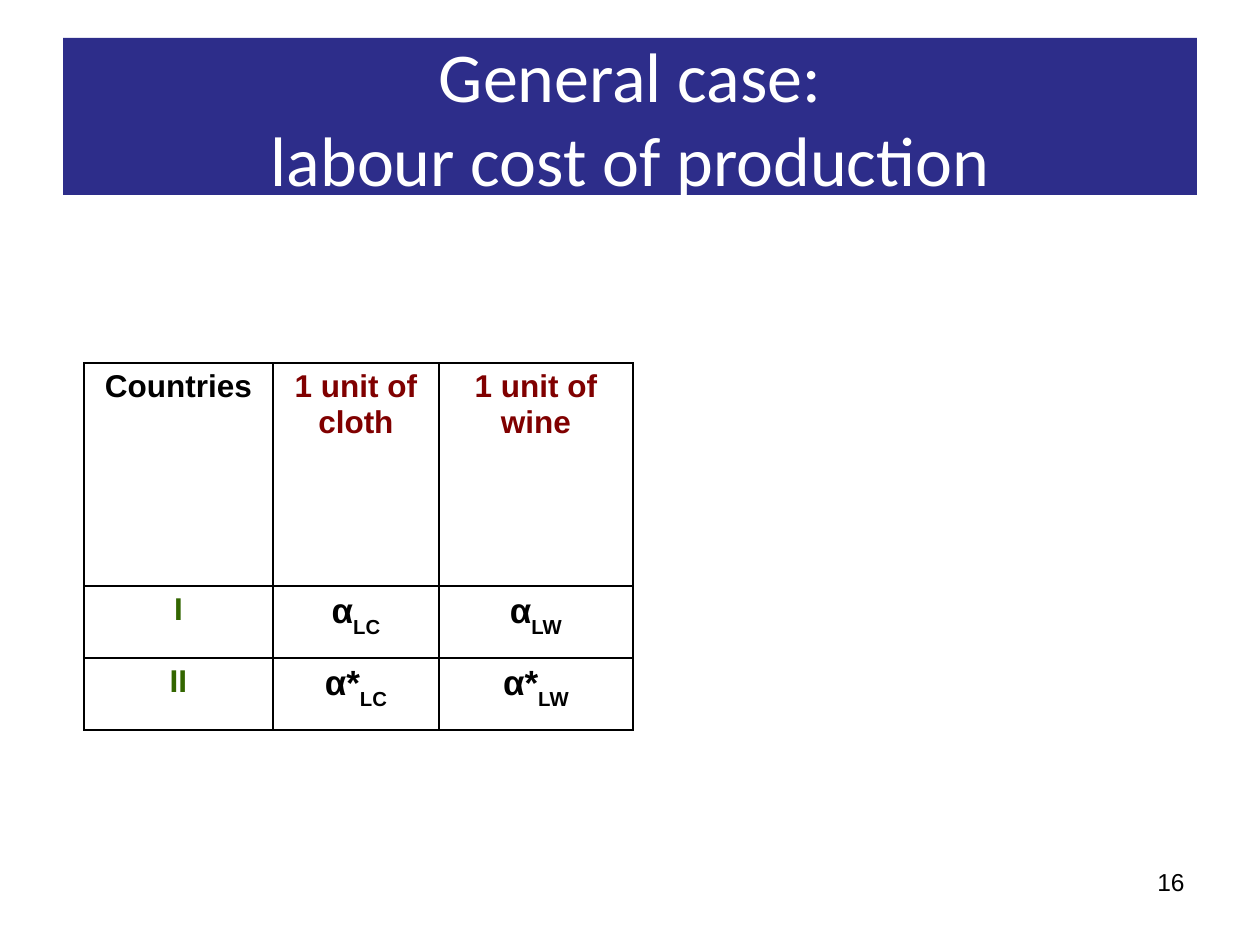
"""Build a slide with a table of labour costs of production for two countries."""
import dataclasses

import lxml.etree
import pptx
import pptx.dml.color
import pptx.enum.text
import pptx.oxml.ns
import pptx.table
import pptx.text.text
import pptx.util

EMU_PER_PX = 914400 // 126
COLORS = {
    "band": "2D2D8A",
    "title": "FFFFFF",
    "ink": "000000",
    "good": "800000",
    "country": "336600",
}
COLUMN_WIDTHS = (189, 166, 194)
ROW_HEIGHTS = (223, 72, 72)


@dataclasses.dataclass(frozen=True)
class Entry:
    text: str
    color: str = "ink"
    size: int = 18
    subscript: str = ""


def cost(symbol: str, good: str) -> Entry:
    return Entry(symbol, size=20, subscript=f"L{good}")


COST_ROWS = (
    (Entry("Countries"), Entry("1 unit of cloth", "good"), Entry("1 unit of wine", "good")),
    (Entry("Ι", "country"), cost("α", "C"), cost("α", "W")),
    (Entry("ΙΙ", "country"), cost("α*", "C"), cost("α*", "W")),
)


def px(length: int) -> pptx.util.Emu:
    return pptx.util.Emu(length * EMU_PER_PX)


def write_text(
    paragraph: pptx.text.text._Paragraph,
    text: str,
    *,
    size: int,
    font: str = "Arial",
    color: str = "ink",
    bold: bool = False,
    align: pptx.enum.text.PP_ALIGN = pptx.enum.text.PP_ALIGN.CENTER,
    baseline: int = 0,
) -> None:
    paragraph.alignment = align
    for index, line in enumerate(text.split("\n")):
        if index:
            paragraph.add_line_break()
        run = paragraph.add_run()
        run.text = line
        run.font.size = pptx.util.Pt(size)
        run.font.name = font
        run.font.bold = bold
        run.font.color.rgb = pptx.dml.color.RGBColor.from_string(COLORS[color])
        if baseline:
            run._r.get_or_add_rPr().set("baseline", str(baseline * 1000))


def draw_borders(cell: pptx.table._Cell) -> None:
    properties = cell._tc.get_or_add_tcPr()
    qn = pptx.oxml.ns.qn
    for side in ("a:lnL", "a:lnR", "a:lnT", "a:lnB"):
        border = lxml.etree.SubElement(properties, qn(side), w=str(pptx.util.Pt(1)))
        fill = lxml.etree.SubElement(border, qn("a:solidFill"))
        lxml.etree.SubElement(fill, qn("a:srgbClr"), val=COLORS["ink"])


def fill_cell(cell: pptx.table._Cell, entry: Entry) -> None:
    draw_borders(cell)
    cell.fill.background()
    paragraph = cell.text_frame.paragraphs[0]
    write_text(paragraph, entry.text, size=entry.size, color=entry.color, bold=True)
    if entry.subscript:
        write_text(paragraph, entry.subscript, size=entry.size, bold=True, baseline=-30)


def main() -> None:
    deck = pptx.Presentation()
    deck.slide_width, deck.slide_height = px(1260), px(945)
    slide = deck.slides.add_slide(deck.slide_layouts[5])

    heading = slide.shapes.title
    heading.left, heading.top, heading.width, heading.height = map(px, (63, 38, 1134, 157))
    heading.fill.solid()
    heading.fill.fore_color.rgb = pptx.dml.color.RGBColor.from_string(COLORS["band"])
    heading.text_frame.auto_size = pptx.enum.text.MSO_AUTO_SIZE.NONE
    heading.text_frame.vertical_anchor = pptx.enum.text.MSO_ANCHOR.MIDDLE
    write_text(
        heading.text_frame.paragraphs[0],
        "General case:\nlabour cost of production",
        size=40,
        font="Calibri",
        color="title",
    )

    page_number = slide.shapes.add_textbox(*map(px, (903, 861, 294, 65)))
    page_number.text_frame.word_wrap = True
    write_text(
        page_number.text_frame.paragraphs[0],
        "16",
        size=14,
        align=pptx.enum.text.PP_ALIGN.RIGHT,
    )

    costs = slide.shapes.add_table(
        len(ROW_HEIGHTS),
        len(COLUMN_WIDTHS),
        *map(px, (84, 363, sum(COLUMN_WIDTHS), sum(ROW_HEIGHTS))),
    ).table
    costs.first_row = costs.horz_banding = False
    for column, width in zip(costs.columns, COLUMN_WIDTHS):
        column.width = px(width)
    for row, height, entries in zip(costs.rows, ROW_HEIGHTS, COST_ROWS):
        row.height = px(height)
        for cell, entry in zip(row.cells, entries):
            fill_cell(cell, entry)

    deck.save("out.pptx")


if __name__ == "__main__":
    main()
